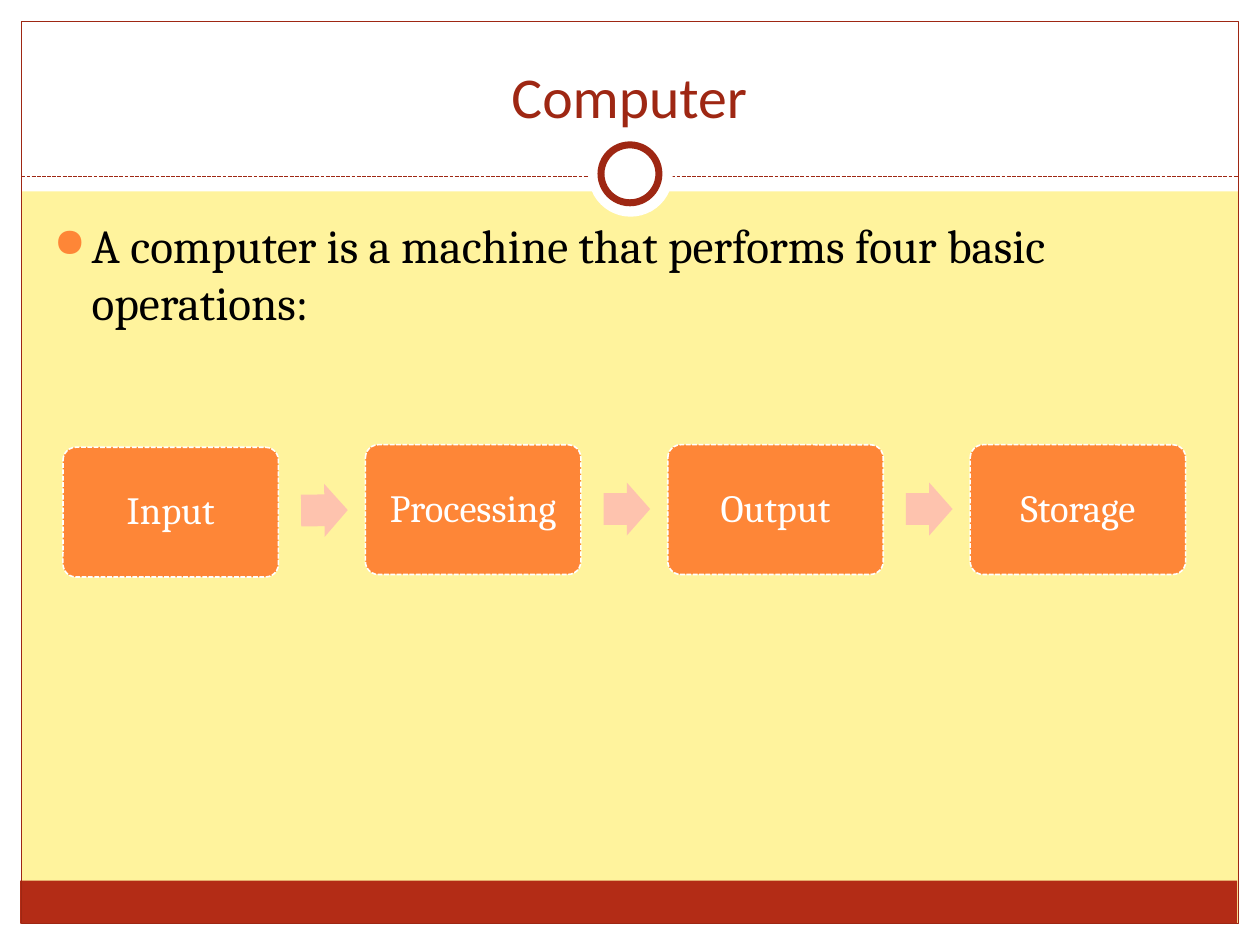
from dataclasses import dataclass

from lxml.etree import SubElement
from pptx import Presentation
from pptx.dml.color import RGBColor
from pptx.enum.dml import MSO_LINE
from pptx.enum.shapes import MSO_CONNECTOR, MSO_SHAPE as SHAPE
from pptx.enum.text import MSO_ANCHOR as ANCHOR, PP_ALIGN as ALIGN
from pptx.oxml.ns import qn
from pptx.util import Inches, Pt


@dataclass(frozen=True)
class Theme:
    background: str = "FFF39D"
    white: str = "FFFFFF"
    black: str = "000000"
    band: str = "B32C16"
    accent: str = "9E2713"
    step: str = "FE8637"
    arrow: str = "FEC3AE"
    title_font: str = "Calibri"
    body_font: str = "Cambria"
    title_size: float = 33
    body_size: float = 27
    step_size: float = 22


class SlideBuilder:
    def __init__(self, slide, theme):
        self.slide = slide
        self.theme = theme
        fill = slide.background.fill
        fill.solid()
        fill.fore_color.rgb = RGBColor.from_string(theme.background)

    def style_line(self, line, color, width, dash=None):
        line.color.rgb = RGBColor.from_string(color)
        line.width = Pt(width)
        if dash:
            line.dash_style = dash

    def shape(self, kind, box, fill=None, line=None, adjustments=()):
        """Add a preset shape; line is (color, width[, dash])."""
        shape = self.slide.shapes.add_shape(kind, *map(Inches, box))
        shape.shadow.inherit = False
        if fill:
            shape.fill.solid()
            shape.fill.fore_color.rgb = RGBColor.from_string(fill)
        else:
            shape.fill.background()
        if line:
            self.style_line(shape.line, *line)
        else:
            shape.line.fill.background()
        for index, value in enumerate(adjustments):
            shape.adjustments[index] = value
        return shape

    def rule(self, start, end, color, width, dash):
        rule = self.slide.shapes.add_connector(
            MSO_CONNECTOR.STRAIGHT, *map(Inches, start + end))
        self.style_line(rule.line, color, width, dash)
        SubElement(rule._element.spPr, qn("a:effectLst"))

    def set_text(self, frame, text, font, size, color, align, anchor):
        frame.word_wrap = True
        frame.vertical_anchor = anchor
        paragraph = frame.paragraphs[0]
        paragraph.text = text
        paragraph.alignment = align
        paragraph.font.name = font
        paragraph.font.size = Pt(size)
        paragraph.font.color.rgb = RGBColor.from_string(color)
        return paragraph

    def text(self, box, *style):
        frame = self.slide.shapes.add_textbox(*map(Inches, box)).text_frame
        return self.set_text(frame, *style)

    def title(self, text, box):
        theme = self.theme
        self.text(box, text, theme.title_font, theme.title_size, theme.accent,
                  ALIGN.CENTER, ANCHOR.BOTTOM)

    def bullet(self, text, box):
        theme = self.theme
        paragraph = self.text(box, text, theme.body_font, theme.body_size,
                              theme.black, ALIGN.LEFT, ANCHOR.TOP)
        paragraph.space_before = Pt(0.2 * theme.body_size)
        props = paragraph._p.get_or_add_pPr()
        props.set("marL", str(Inches(0.3)))
        props.set("indent", str(Inches(-0.3)))
        # Bullet settings go before the default run properties.
        defaults = props.find(qn("a:defRPr"))
        color = SubElement(props, qn("a:buClr"))
        SubElement(color, qn("a:srgbClr"), val=theme.step)
        SubElement(props, qn("a:buSzPct"), val="85000")
        SubElement(props, qn("a:buChar"), char="●")
        if defaults is not None:
            props.append(defaults)

    def step(self, text, box):
        theme = self.theme
        step = self.shape(SHAPE.ROUNDED_RECTANGLE, box, theme.step,
                          (theme.white, 0.9, MSO_LINE.SQUARE_DOT), [0.1])
        paragraph = self.set_text(
            step.text_frame, text, theme.body_font, theme.step_size,
            theme.white, ALIGN.CENTER, ANCHOR.MIDDLE)
        paragraph.line_spacing = 0.9

    def arrow(self, box, rotation):
        arrow = self.shape(SHAPE.RIGHT_ARROW, box, self.theme.arrow,
                           adjustments=[0.6, 0.5])
        arrow.rotation = rotation

    def frame(self):
        """Draw the white margins, header, footer band, border and ring."""
        theme = self.theme
        for margin in ((0, 7.33, 10, 0.17), (0, 0, 10, 1.52),
                       (0, 0, 0.17, 7.5), (9.83, 0, 0.17, 7.5)):
            self.shape(SHAPE.RECTANGLE, margin, theme.white)
        self.shape(SHAPE.RECTANGLE, (0.16, 6.99, 9.66, 0.34), theme.band)
        self.shape(SHAPE.RECTANGLE, (0.17, 0.17, 9.66, 7.16),
                   line=(theme.accent, 0.75))
        self.rule((0.17, 1.4), (9.83, 1.4), theme.accent, 0.75,
                  MSO_LINE.SQUARE_DOT)
        self.shape(SHAPE.OVAL, (4.67, 1.05, 0.67, 0.67), theme.white)
        self.shape(SHAPE.OVAL, (4.77, 1.15, 0.46, 0.46), theme.white,
                   (theme.accent, 4))

    def process(self, names, left, top, pitch):
        """Draw a row of steps with an arrow in each gap."""
        for index, name in enumerate(names):
            x = left + index * pitch
            # The first step sits slightly lower, so its arrow tilts upward.
            first = index == 0
            self.step(name, (x, top + (0.02 if first else 0), 1.71, 1.03))
            if index < len(names) - 1:
                self.arrow((x + 1.89, top + (0.31 if first else 0.3),
                            0.37, 0.42), 359.4 if first else 0)


def main():
    presentation = Presentation()
    presentation.slide_width = Inches(10)
    presentation.slide_height = Inches(7.5)
    blank = presentation.slide_layouts[6]
    builder = SlideBuilder(presentation.slides.add_slide(blank), Theme())
    builder.frame()
    builder.title("Computer", (0.33, 0.25, 9.33, 0.83))
    builder.bullet("A computer is a machine that performs four basic operations:",
                   (0.33, 1.67, 9.3, 5))
    builder.process(("Input", "Processing", "Output", "Storage"),
                    left=0.5, top=3.53, pitch=2.4)
    presentation.save("out.pptx")


if __name__ == "__main__":
    main()
